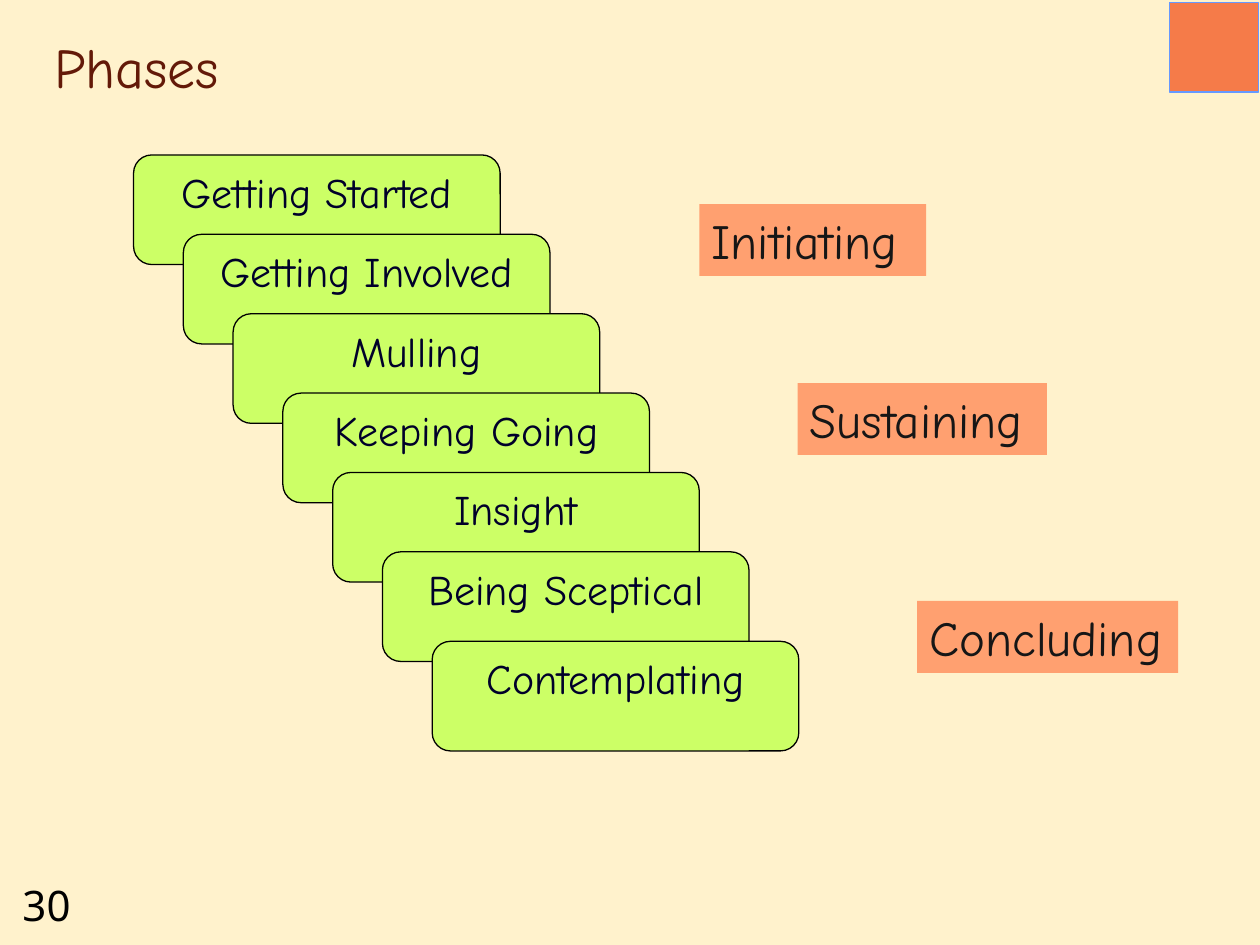
import pptx
import pptx.dml.color
import pptx.enum.shapes
import pptx.enum.text
import pptx.util

RGBColor = pptx.dml.color.RGBColor
Inches = pptx.util.Inches
Pt = pptx.util.Pt
Shape = pptx.enum.shapes.MSO_SHAPE
Align = pptx.enum.text.PP_ALIGN
Anchor = pptx.enum.text.MSO_ANCHOR
AutoSize = pptx.enum.text.MSO_AUTO_SIZE

CREAM = RGBColor(0xFF, 0xF2, 0xCC)
BROWN = RGBColor(0x63, 0x19, 0x08)
LIME = RGBColor(0xCC, 0xFF, 0x66)
NAVY = RGBColor(0x00, 0x00, 0x2A)
BLACK = RGBColor(0x00, 0x00, 0x00)
SALMON = RGBColor(0xFF, 0xA0, 0x70)
CHARCOAL = RGBColor(0x16, 0x16, 0x16)
ORANGE = RGBColor(0xF5, 0x7B, 0x49)
BLUE = RGBColor(0x66, 0x99, 0xFF)

PHASES = ["Getting Started", "Getting Involved", "Mulling", "Keeping Going",
          "Insight", "Being Sceptical", "Contemplating"]
STAGES = [("Initiating", 5.55, 1.62, 1.8),
          ("Sustaining", 6.33, 3.04, 1.98),
          ("Concluding", 7.28, 4.77, 2.07)]


class PhaseSlide:
    font = "Comic Neue"

    def __init__(self, deck):
        self.slide = deck.slides.add_slide(deck.slide_layouts[5])
        self.slide.background.fill.solid()
        self.slide.background.fill.fore_color.rgb = CREAM

    def add_text(self, frame, text, size, color, align=Align.LEFT, font=None):
        paragraph = frame.paragraphs[0]
        paragraph.alignment = align
        run = paragraph.add_run()
        run.text = text
        run.font.size = Pt(size)
        run.font.name = font or self.font
        run.font.color.rgb = color

    def title(self, text):
        heading = self.slide.shapes.title
        heading.left, heading.top = Inches(0.33), Inches(0.17)
        heading.width, heading.height = Inches(8.5), Inches(0.67)
        heading.text_frame.vertical_anchor = Anchor.BOTTOM
        heading.text_frame.auto_size = AutoSize.NONE
        self.add_text(heading.text_frame, text, 32, BROWN)

    def page_number(self, text):
        number = self.slide.shapes.add_textbox(
            Inches(0.08), Inches(6.93), Inches(0.75), Inches(0.5))
        number.text_frame.word_wrap = True
        self.add_text(number.text_frame, text, 24, BLACK, font="Noto Sans")

    def block(self, preset, left, top, width, height, fill, line=None):
        block = self.slide.shapes.add_shape(
            preset, Inches(left), Inches(top), Inches(width), Inches(height))
        block.shadow.inherit = False
        block.fill.solid()
        block.fill.fore_color.rgb = fill
        if line is None:
            block.line.fill.background()
        else:
            block.line.color.rgb = line
            block.line.width = Pt(0.75)
        block.text_frame.vertical_anchor = Anchor.TOP
        return block

    def phase(self, text, left, top):
        step = self.block(Shape.ROUNDED_RECTANGLE, left, top, 2.91, 0.87, LIME, BLACK)
        self.add_text(step.text_frame, text, 24, NAVY, Align.CENTER)

    def stage(self, text, left, top, width):
        label = self.block(Shape.RECTANGLE, left, top, width, 0.57, SALMON)
        label.text_frame.word_wrap = False
        label.text_frame.auto_size = AutoSize.SHAPE_TO_FIT_TEXT
        self.add_text(label.text_frame, text, 28, CHARCOAL)


def main():
    deck = pptx.Presentation()
    deck.slide_width, deck.slide_height = Inches(10), Inches(7.5)
    page = PhaseSlide(deck)
    page.page_number("30")
    page.title("Phases")
    last = len(PHASES) - 1
    for index, phase in enumerate(PHASES):
        extra_drop = 0.08 if index == last else 0
        page.phase(phase, 1.06 + 2.37 * index / last, 1.23 + 0.63 * index + extra_drop)
    page.block(Shape.ACTION_BUTTON_CUSTOM, 9.28, 0.02, 0.71, 0.71, ORANGE, BLUE)
    for stage in STAGES:
        page.stage(*stage)
    deck.save("out.pptx")


if __name__ == "__main__":
    main()
